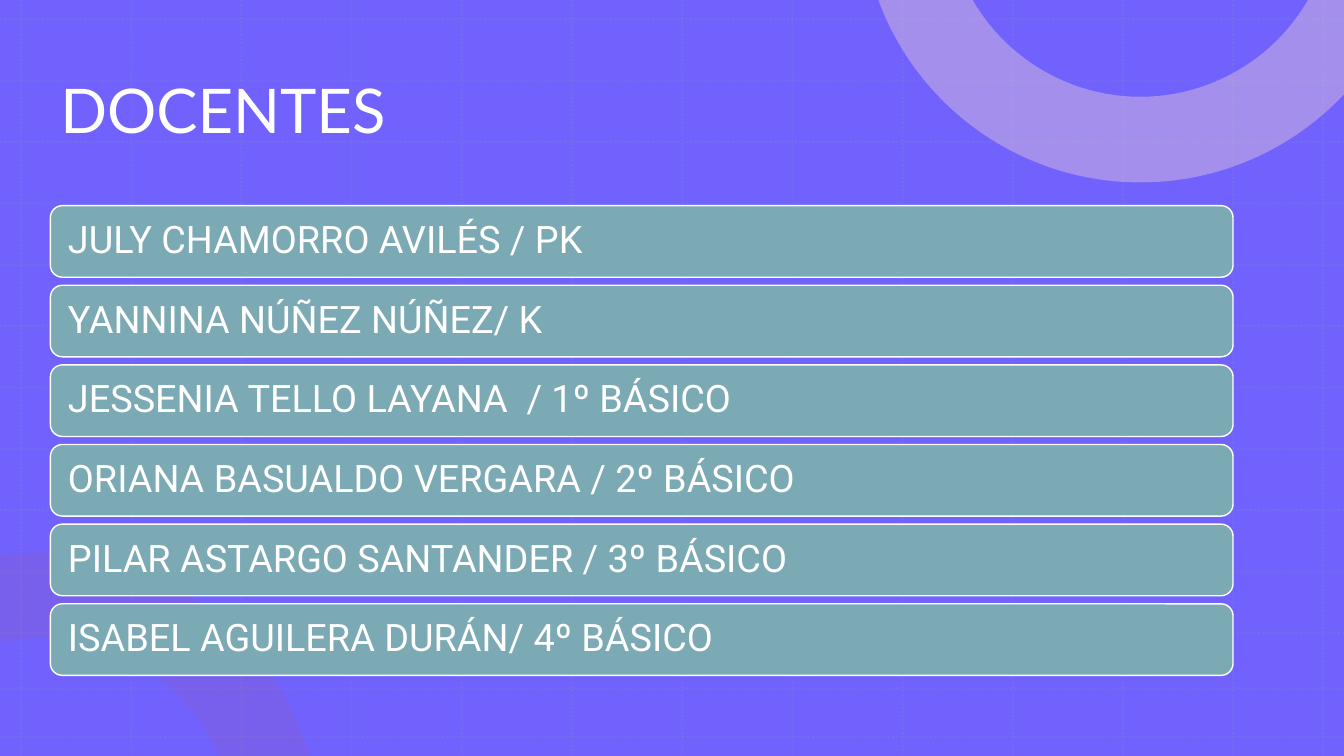
from itertools import pairwise
from math import cos, radians, sin, tan

from lxml.etree import SubElement
from pptx import Presentation
from pptx.dml.color import RGBColor
from pptx.enum.dml import MSO_LINE
from pptx.enum.shapes import MSO_CONNECTOR, MSO_SHAPE
from pptx.enum.text import MSO_ANCHOR, PP_ALIGN
from pptx.oxml.ns import qn
from pptx.util import Inches, Pt

WIDTH, HEIGHT = 13.33, 7.5
LEFT, CONTENT_WIDTH = 0.5, 11.73
OUTER_RADIUS, INNER_RADIUS = 2.77, 1.92
TEACHERS = [
    "JULY CHAMORRO AVILÉS / PK",
    "YANNINA NÚÑEZ NÚÑEZ/ K",
    "JESSENIA TELLO LAYANA  / 1º BÁSICO",
    "ORIANA BASUALDO VERGARA / 2º BÁSICO",
    "PILAR ASTARGO SANTANDER / 3º BÁSICO",
    "ISABEL AGUILERA DURÁN/ 4º BÁSICO",
]


def color(value):
    return RGBColor.from_string(value)


def set_opacity(shape, percent):
    for node in shape._element.iter(qn("a:srgbClr")):
        SubElement(node, qn("a:alpha")).set("val", str(percent * 1000))


def paint(shape, fill, line=None):
    shape.shadow.inherit = False
    shape.fill.solid()
    shape.fill.fore_color.rgb = color(fill)
    if line:
        shape.line.color.rgb = color(line)
        shape.line.width = Pt(1)
    else:
        shape.line.fill.background()


def write(shape, text, size, font, inset):
    """Put one left-aligned white line of text in the middle of a shape."""
    frame = shape.text_frame
    frame.text = text
    frame.word_wrap = True
    frame.vertical_anchor = MSO_ANCHOR.MIDDLE
    frame.margin_left = frame.margin_right = Inches(inset)
    paragraph = frame.paragraphs[0]
    paragraph.alignment = PP_ALIGN.LEFT
    paragraph.line_spacing = 0.9
    run_font = paragraph.runs[0].font
    run_font.size = Pt(size)
    run_font.name = font
    run_font.color.rgb = color("FFFFFF")


def add_grid_line(group, *ends):
    line = group.shapes.add_connector(MSO_CONNECTOR.STRAIGHT, *map(Inches, ends))
    line.line.color.rgb = color("7F96BA")
    line.line.width = Pt(1.5)
    line.line.dash_style = MSO_LINE.ROUND_DOT
    set_opacity(line, 20)
    SubElement(line._element.spPr, qn("a:effectLst"))


def add_background(slide, width, height):
    background = slide.shapes.add_shape(
        MSO_SHAPE.RECTANGLE, 0, 0, Inches(width), Inches(height))
    paint(background, "7162FE")
    grid = slide.shapes.add_group_shape()
    for x in [0.21 + column * 1.0927 for column in range(12)] + [13.12]:
        add_grid_line(grid, x, 0, x, height)
    for y in [0.19 + row * 0.609 for row in range(11)] + [6.83, 7.31]:
        add_grid_line(grid, 0, y, width, y)


def arc_points(center_x, center_y, radius, angles):
    """Return the start, then two handles and an end for each piece of arc."""
    def point(angle, handle=0):
        x, y = cos(radians(angle)), sin(radians(angle))
        return (Inches(center_x + radius * (x - handle * y)),
                Inches(center_y + radius * (y + handle * x)))

    points = [point(angles[0])]
    for start, end in pairwise(angles):
        handle = 4 / 3 * tan(radians(end - start) / 4)
        points += [point(start, handle), point(end, -handle), point(end)]
    return points


def add_ring(slide, center, outer_angles, inner_angles, corners, fill, opacity):
    """Draw the visible part of a ring, closed along the slide's edges."""
    outer = arc_points(*center, OUTER_RADIUS, outer_angles)
    inner = arc_points(*center, INNER_RADIUS, inner_angles)
    corner_points = [(Inches(x), Inches(y)) for x, y in corners]
    builder = slide.shapes.build_freeform(*outer[0])
    builder.add_line_segments(outer[1:] + inner + corner_points, close=True)
    ring = builder.convert_to_shape()
    segments = list(ring._element.iter(qn("a:lnTo")))
    inner_start = len(outer)
    for first in (0, 3, inner_start, inner_start + 3):
        curve, *rest = segments[first:first + 3]
        curve.tag = qn("a:cubicBezTo")
        for segment in rest:
            curve.append(segment[0])
            segment.getparent().remove(segment)
    paint(ring, fill)
    set_opacity(ring, opacity)


def add_title(slide, left, top, width, height):
    title = slide.shapes.add_textbox(*map(Inches, (left, top, width, height)))
    write(title, "DOCENTES", 44, "Lato", 0.1)


def add_teacher_list(slide, left, top, width, bar_height, pitch):
    for row, teacher in enumerate(TEACHERS):
        bar = slide.shapes.add_shape(
            MSO_SHAPE.ROUNDED_RECTANGLE,
            *map(Inches, (left, top + row * pitch, width, bar_height)))
        paint(bar, "7BA9B4", "FFFFFF")
        write(bar, teacher, 27, "Roboto", 0.14)


def main():
    presentation = Presentation()
    presentation.slide_width = Inches(WIDTH)
    presentation.slide_height = Inches(HEIGHT)
    slide = presentation.slides.add_slide(presentation.slide_layouts[6])
    add_background(slide, WIDTH, HEIGHT)
    add_ring(slide, (0.4, 8.25), (-98.3, -90, -15.7), (-23, -90, -102),
             [], "9C5CA7", 20)
    add_ring(slide, (11.31, -0.96), (43.2, 90, 159.7), (150, 90, 30),
             [(WIDTH, 0)], "D8BFDC", 50)
    add_title(slide, LEFT, 0.4, CONTENT_WIDTH, 1.45)
    add_teacher_list(slide, LEFT, 2.04, CONTENT_WIDTH, 0.71, 0.79)
    presentation.save("out.pptx")


if __name__ == "__main__":
    main()
